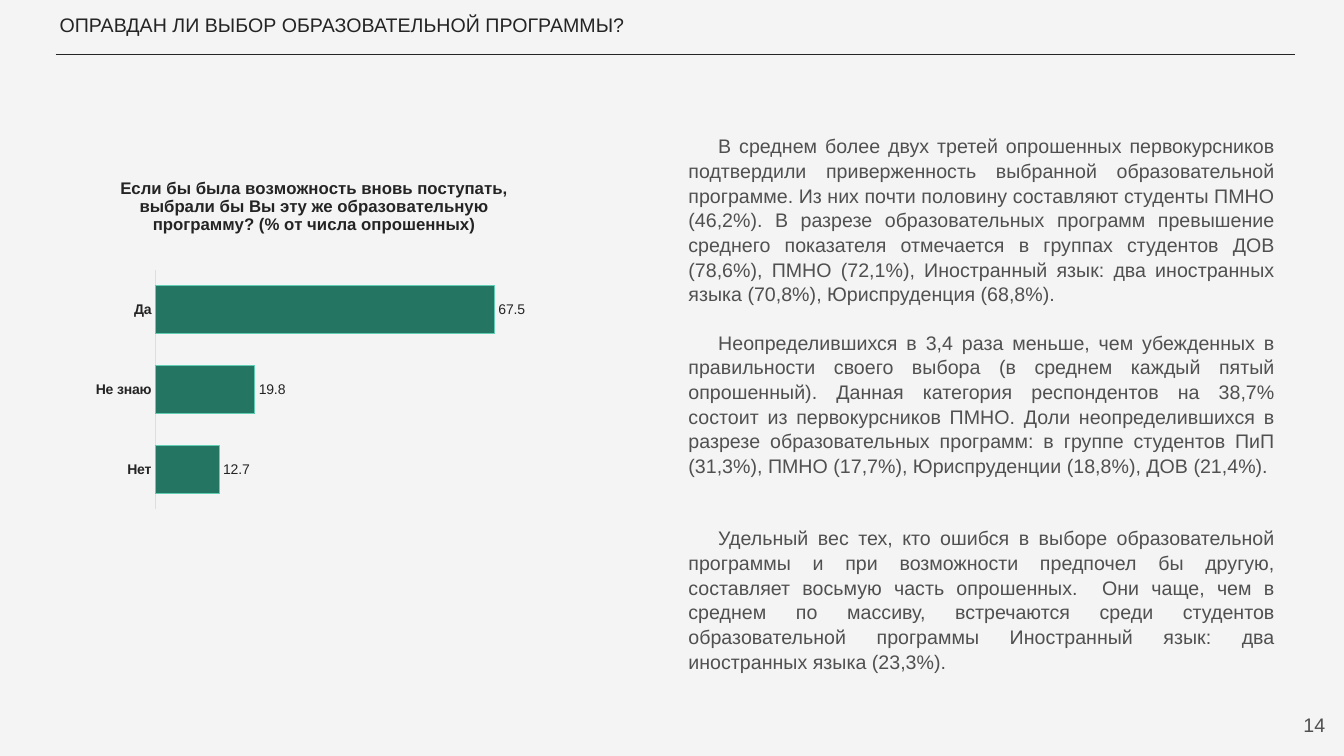
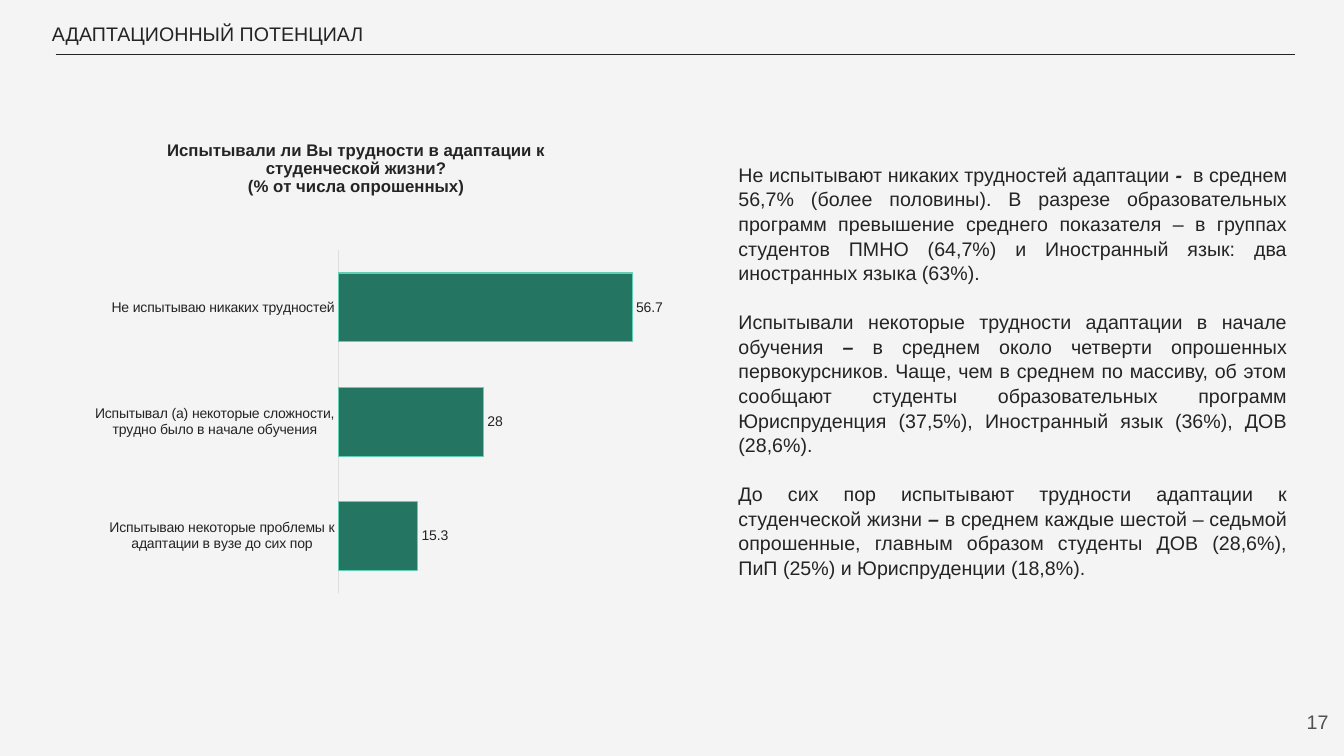
from dataclasses import dataclass
from typing import NamedTuple

from lxml.etree import SubElement
from pptx import Presentation
from pptx.chart.data import CategoryChartData as ChartData
from pptx.dml.color import RGBColor
from pptx.enum.chart import XL_CHART_TYPE as Kind
from pptx.enum.chart import XL_LABEL_POSITION as Spot
from pptx.enum.chart import XL_TICK_LABEL_POSITION as TickSpot
from pptx.enum.chart import XL_TICK_MARK as Tick
from pptx.enum.shapes import MSO_CONNECTOR as Link
from pptx.enum.text import MSO_ANCHOR as Anchor
from pptx.enum.text import MSO_AUTO_SIZE as Fit
from pptx.enum.text import PP_ALIGN as Align
from pptx.oxml.ns import qn
from pptx.util import Cm, Pt

# Shared look
PAPER = RGBColor(0xF4, 0xF4, 0xF4)
INK = RGBColor(0x24, 0x24, 0x24)
GRAY = RGBColor(0x50, 0x50, 0x50)
GREEN = RGBColor(0x24, 0x75, 0x61)
MINT = RGBColor(0x62, 0xCF, 0xB5)
PALE = RGBColor(0xDE, 0xDE, 0xDE)
FACE = "Arial"
LEAD = 1.05
GAP = 17  # one text line, in points


class Box(NamedTuple):
    left: float
    top: float
    width: float
    height: float

    def lengths(self) -> list:
        return [Cm(side) for side in self]


class Para(NamedTuple):
    runs: tuple[str, ...]  # every second run is bold italic
    lines: int = 1  # blank lines' worth of space above


@dataclass
class Bars:
    box: Box
    title: str
    values: dict[str, float]
    plot: Box  # shares of the chart area
    top: int
    bold: bool


@dataclass
class Body:
    box: Box
    inset: tuple[float, float]
    color: RGBColor
    indent: float
    paras: list[Para]


@dataclass
class Page:
    title: str
    place: Box
    number: str
    inset: float
    bars: Bars
    body: Body


def style(font, size: float, color: RGBColor, bold: bool = False) -> None:
    font.name, font.size, font.bold = FACE, Pt(size), bold
    font.color.rgb = color


def pad(frame, side: float, top: float) -> None:
    frame.margin_left = frame.margin_right = Cm(side)
    frame.margin_top = frame.margin_bottom = Cm(top)
    frame.word_wrap = True
    frame.auto_size = Fit.NONE
    frame.vertical_anchor = Anchor.TOP


def add_head(slide, text: str, place: Box) -> None:
    head = slide.shapes.title
    head.left, head.top, head.width, head.height = place.lengths()
    frame = head.text_frame
    frame.text = text
    pad(frame, 0, 0)
    para = frame.paragraphs[0]
    para.alignment = Align.LEFT
    style(para.runs[0].font, 14, INK)


def add_rule(slide) -> None:
    rule = slide.shapes.add_connector(
        Link.STRAIGHT, Cm(1.4), Cm(1.37), Cm(32.64), Cm(1.37))
    rule.line.color.rgb = INK
    rule.line.width = Pt(0.75)
    SubElement(rule.element.spPr, qn("a:effectLst"))


def add_number(slide, text: str, inset: float) -> None:
    box = Box(31.7, 17.6, 2.03, 1.45)
    frame = slide.shapes.add_textbox(*box.lengths()).text_frame
    frame.text = text
    pad(frame, inset, inset)
    para = frame.paragraphs[0]
    para.alignment = Align.RIGHT
    para.line_spacing = LEAD
    style(para.runs[0].font, 14, GRAY)


def add_body(slide, body: Body) -> None:
    frame = slide.shapes.add_textbox(*body.box.lengths()).text_frame
    pad(frame, *body.inset)
    for spot, item in enumerate(body.paras):
        para = frame.add_paragraph() if spot else frame.paragraphs[0]
        para.alignment = Align.JUSTIFY
        para.line_spacing = LEAD
        para.space_before = Pt(GAP * item.lines if spot else 0)
        if body.indent:
            props = para._p.get_or_add_pPr()
            props.set("marL", "0")
            props.set("indent", str(Cm(body.indent)))
        for turn, text in enumerate(item.runs):
            run = para.add_run()
            run.text = text
            strong = turn % 2 == 1
            style(run.font, 14, body.color, strong)
            run.font.italic = strong


def set_layout(node, inner: bool, **shares: float) -> None:
    """Give a chart part a manual layout."""
    layout = node.find(qn("c:layout"))
    if layout is None:
        layout = SubElement(node, qn("c:layout"))
    text = node.find(qn("c:tx"))
    node.insert(0, layout) if text is None else text.addnext(layout)
    manual = SubElement(layout, qn("c:manualLayout"))
    modes = {"layoutTarget": "inner"} if inner else {}
    modes |= {"xMode": "edge", "yMode": "edge"}
    for name, value in (modes | shares).items():
        SubElement(manual, qn(f"c:{name}")).set("val", str(value))


def add_bars(slide, bars: Bars) -> None:
    data = ChartData()
    data.categories = list(bars.values)
    data.add_series("Series 1", list(bars.values.values()))
    chart = slide.shapes.add_chart(
        Kind.BAR_CLUSTERED, *bars.box.lengths(), data).chart
    style(chart.font, 10, INK)
    chart.has_legend = False

    # Heading and plot area
    frame = chart.chart_title.text_frame
    frame.text = bars.title
    for para in frame.paragraphs:
        style(para.runs[0].font, 12, INK, True)
    root = chart.element
    set_layout(root.find(".//" + qn("c:title")), False, x=0.14, y=0.05)
    plot = bars.plot
    set_layout(root.find(".//" + qn("c:plotArea")), True,
               x=plot.left, y=plot.top, w=plot.width, h=plot.height)

    # Axes
    axis = chart.category_axis
    axis.major_tick_mark = axis.minor_tick_mark = Tick.NONE
    axis.tick_label_position = TickSpot.NEXT_TO_AXIS
    axis.format.line.color.rgb = PALE
    axis.format.line.width = Pt(0.75)
    style(axis.tick_labels.font, 10, INK, bars.bold)
    scale = chart.value_axis
    scale.minimum_scale, scale.maximum_scale = 0, bars.top
    scale.has_major_gridlines = False
    scale.visible = False

    # Bars and their values
    group = chart.plots[0]
    group.gap_width = 66
    group.vary_by_categories = False
    look = group.series[0].format
    look.fill.solid()
    look.fill.fore_color.rgb = GREEN
    look.line.color.rgb = MINT
    look.line.width = Pt(0.75)
    labels = group.series[0].data_labels
    labels.show_value = True
    labels.position = Spot.OUTSIDE_END
    style(labels.font, 10, INK)


PAGES = [
    Page(
        "ОПРАВДАН ЛИ ВЫБОР ОБРАЗОВАТЕЛЬНОЙ ПРОГРАММЫ?",
        Box(1.5, 0.33, 16, 0.7), "14", 0.33,
        Bars(
            Box(1.04, 3.96, 13.69, 8.89),
            "Если бы была возможность вновь поступать, выбрали бы Вы эту же "
            "образовательную программу? (% от числа опрошенных)",
            {"Нет": 12.7, "Не знаю": 19.8, "Да": 67.5},
            Box(0.21, 0.32, 0.74, 0.68), 80, True),
        Body(
            Box(17.02, 3.02, 15.44, 14.58), (0.33, 0.33), GRAY, 0.75,
            [
                Para((
                    "В среднем более двух третей опрошенных первокурсников "
                    "подтвердили приверженность выбранной образовательной "
                    "программе. Из них почти половину составляют студенты "
                    "ПМНО (46,2%). В разрезе образовательных программ "
                    "превышение среднего показателя отмечается в группах "
                    "студентов ДОВ (78,6%), ПМНО (72,1%), Иностранный язык: "
                    "два иностранных языка (70,8%), Юриспруденция (68,8%).",)),
                Para((
                    "Неопределившихся в 3,4 раза меньше, чем убежденных в "
                    "правильности своего выбора (в среднем каждый пятый "
                    "опрошенный). Данная категория респондентов на 38,7% "
                    "состоит из первокурсников ПМНО. Доли неопределившихся в "
                    "разрезе образовательных программ: в группе студентов ПиП "
                    "(31,3%), ПМНО (17,7%), Юриспруденции (18,8%), ДОВ "
                    "(21,4%).",)),
                Para((
                    "Удельный вес тех, кто ошибся в выборе образовательной "
                    "программы и при возможности предпочел бы другую, "
                    "составляет восьмую часть опрошенных.  Они чаще, чем в "
                    "среднем по массиву, встречаются среди студентов "
                    "образовательной программы Иностранный язык: два "
                    "иностранных языка (23,3%).",), 2),
            ])),
    Page(
        "АДАПТАЦИОННЫЙ ПОТЕНЦИАЛ",
        Box(1.31, 0.56, 12.5, 0.7), "17", 0.25,
        Bars(
            Box(2.01, 2.84, 15.16, 12.17),
            "Испытывали ли Вы трудности в адаптации к студенческой жизни?\n"
            "(% от числа опрошенных)",
            {
                "Испытываю некоторые проблемы к адаптации в вузе до сих пор":
                    15.3,
                "Испытывал (а) некоторые сложности, трудно было в начале "
                "обучения": 28,
                "Не испытываю никаких трудностей": 56.7,
            },
            Box(0.43, 0.285, 0.517, 0.71), 60, False),
        Body(
            Box(18.36, 3.94, 14.33, 11.58), (0.25, 0.13), INK, 0,
            [
                Para((
                    "Не испытывают никаких трудностей адаптации ", "- ",
                    " в среднем 56,7% (более половины). В разрезе "
                    "образовательных программ превышение среднего показателя "
                    "– в группах студентов ПМНО (64,7%) и Иностранный язык: "
                    "два иностранных языка (63%).")),
                Para((
                    "Испытывали некоторые трудности адаптации в начале "
                    "обучения ", "–",
                    " в среднем около четверти опрошенных первокурсников. "
                    "Чаще, чем в среднем по массиву, об этом сообщают "
                    "студенты образовательных программ Юриспруденция (37,5%), "
                    "Иностранный язык (36%), ДОВ (28,6%).")),
                Para((
                    "До сих пор испытывают трудности адаптации к студенческой "
                    "жизни ", "– ",
                    "в среднем каждые шестой – седьмой опрошенные, главным "
                    "образом студенты ДОВ (28,6%), ПиП (25%) и Юриспруденции "
                    "(18,8%).")),
            ])),
]


def main() -> None:
    deck = Presentation()
    deck.slide_width, deck.slide_height = Cm(33.87), Cm(19.05)
    back = deck.slide_master.background.fill
    back.solid()
    back.fore_color.rgb = PAPER
    for page in PAGES:
        slide = deck.slides.add_slide(deck.slide_layouts[5])
        add_rule(slide)
        add_head(slide, page.title, page.place)
        add_number(slide, page.number, page.inset)
        add_bars(slide, page.bars)
        add_body(slide, page.body)
    deck.save("out.pptx")


if __name__ == "__main__":
    main()
